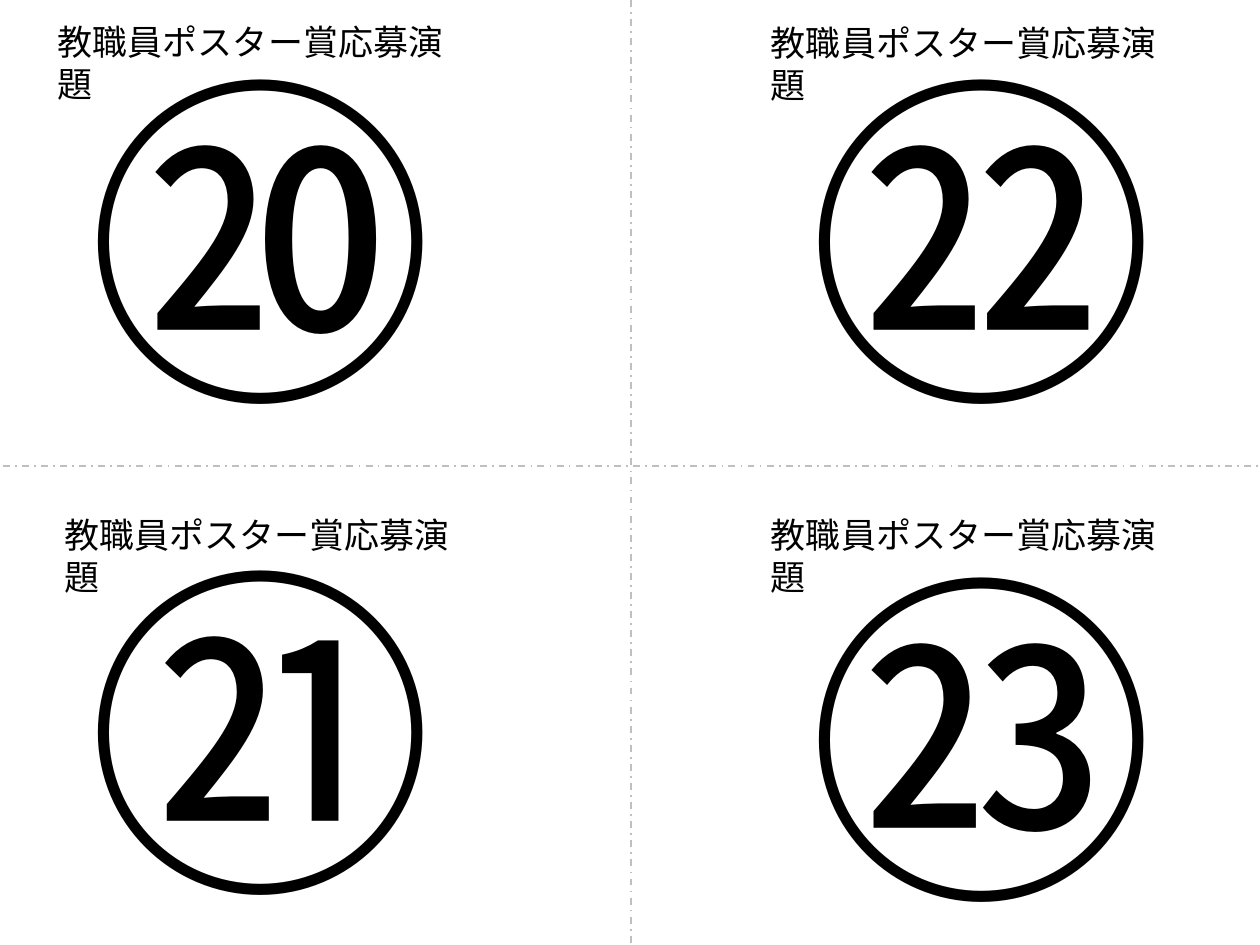
import pptx
import pptx.dml.color
import pptx.enum.dml
import pptx.enum.shapes
import pptx.enum.text
import pptx.oxml.ns
import pptx.util
from lxml import etree

WIDTH, HEIGHT = 10, 7.5
FONT = "Noto Sans CJK JP"
CAPTION = "教職員ポスター賞応募演題"
NUMBER_SIZE = (2.99, 3.45)
CAPTION_SIZE = (3.45, 0.44)
CARDS = [
    ("⑳", (0.59, 0.16), (0.36, 0.11)),
    ("㉒", (6.31, 0.16), (6.02, 0.12)),
    ("㉑", (0.59, 4.06), (0.41, 4.03)),
    ("㉓", (6.31, 4.11), (6.02, 4.03)),
]


def rgb(value):
    return pptx.dml.color.RGBColor.from_string(value)


def inches(*values):
    return [pptx.util.Inches(v) for v in values]


def add_cut_line(s, start, end):
    line = s.shapes.add_connector(
        pptx.enum.shapes.MSO_CONNECTOR.STRAIGHT, *inches(*start, *end))
    line.line.color.rgb = rgb("BFBFBF")
    line.line.width = pptx.util.Pt(1)
    line.line.dash_style = pptx.enum.dml.MSO_LINE.DASH_DOT
    etree.SubElement(line._element.spPr, pptx.oxml.ns.qn("a:effectLst"))


def add_text(s, text, position, size, points):
    sp = s.shapes.add_textbox(*inches(*position, *size))
    tf = sp.text_frame
    tf.word_wrap = True
    tf.auto_size = pptx.enum.text.MSO_AUTO_SIZE.SHAPE_TO_FIT_TEXT
    r = tf.paragraphs[0].add_run()
    r.text = text
    r.font.size = pptx.util.Pt(points)
    r.font.name = FONT
    r.font.color.rgb = rgb("000000")
    ea = etree.SubElement(r.font._element, pptx.oxml.ns.qn("a:ea"))
    ea.set("typeface", FONT)


def main():
    prs = pptx.Presentation()
    prs.slide_width, prs.slide_height = inches(WIDTH, HEIGHT)
    s = prs.slides.add_slide(prs.slide_layouts[6])

    add_cut_line(s, (-0.13, 3.7), (WIDTH, 3.7))
    add_cut_line(s, (5.01, 0), (5.01, 7.56))
    for number, position, _ in CARDS:
        add_text(s, number, position, NUMBER_SIZE, 199)
    for _, _, position in CARDS:
        add_text(s, CAPTION, position, CAPTION_SIZE, 20)

    prs.save("out.pptx")


if __name__ == "__main__":
    main()
